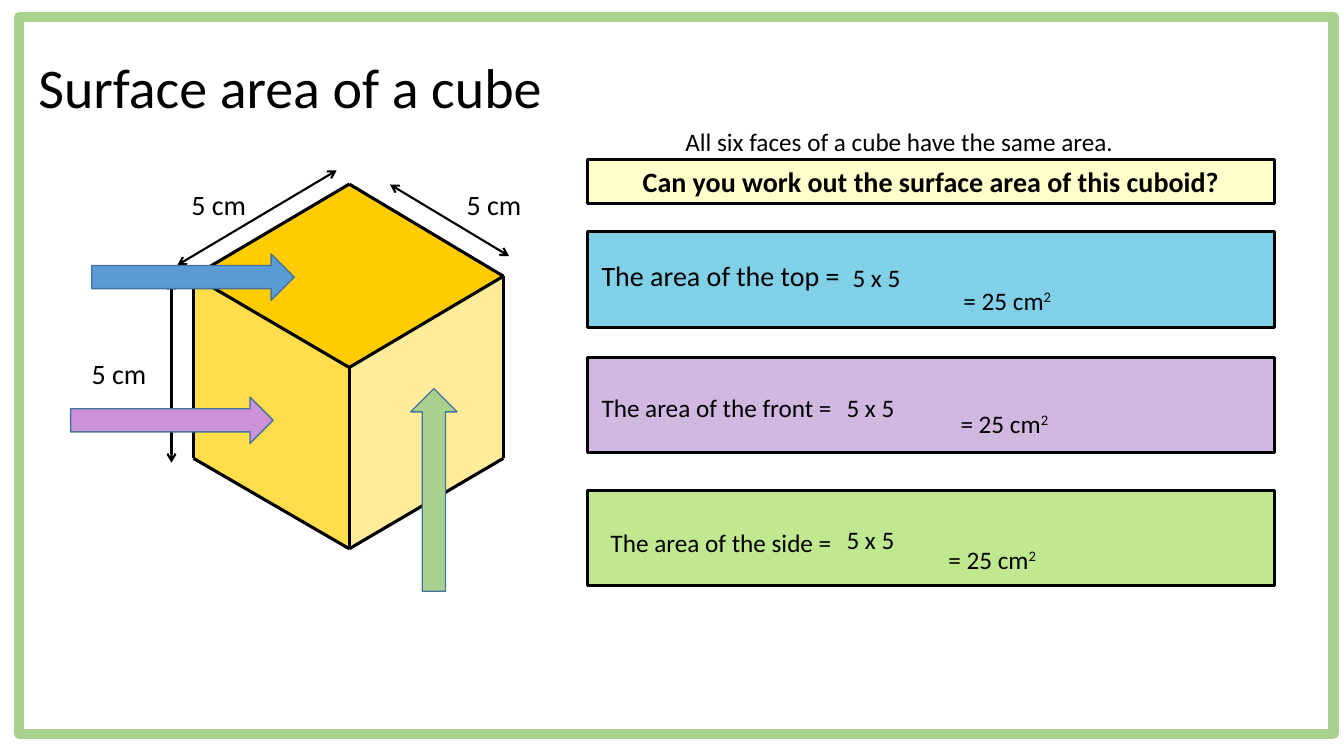
from lxml.etree import SubElement
from pptx import Presentation
from pptx.dml.color import RGBColor
from pptx.enum.shapes import MSO_CONNECTOR, MSO_SHAPE
from pptx.enum.text import MSO_ANCHOR, MSO_AUTO_SIZE, PP_ALIGN
from pptx.oxml.ns import qn
from pptx.util import Pt

COLORS = {
    "black": "000000", "white": "FFFFFF", "frame": "A9D18E",
    "top": "FFCC00", "front": "FFDD4B", "side": "FFEC9B",
    "question": "FFFFCC", "top_box": "80D0E8", "front_box": "D0B8E0",
    "side_box": "C0E890", "blue": "5B9BD5", "purple": "CB92DA",
    "green": "A9D18E", "outline": "43739E",
}


def rgb(name):
    return RGBColor.from_string(COLORS[name])


class SlideBuilder:
    font = "Calibri"

    def __init__(self, slide):
        self.s = slide

    def paint(self, sp, fill, line=None, width=2.25):
        sp.shadow.inherit = False
        sp.fill.solid()
        sp.fill.fore_color.rgb = rgb(fill)
        if line:
            sp.line.color.rgb = rgb(line)
            sp.line.width = Pt(width)
        else:
            sp.line.fill.background()
        return sp

    def shape(self, kind, box, fill, line="black", width=2.25):
        sp = self.s.shapes.add_shape(kind, *map(Pt, box))
        return self.paint(sp, fill, line, width)

    def polygon(self, points, fill):
        pts = [(Pt(x), Pt(y)) for x, y in points]
        builder = self.s.shapes.build_freeform(*pts[0], scale=1.0)
        builder.add_line_segments(pts[1:], close=True)
        return self.paint(builder.convert_to_shape(), fill)

    def line(self, start, end, width=2.25, arrows=False):
        sp = self.s.shapes.add_connector(
            MSO_CONNECTOR.STRAIGHT, *map(Pt, (*start, *end)))
        sp.line.color.rgb = rgb("black")
        sp.line.width = Pt(width)
        if arrows:
            ln = sp.element.spPr.find(qn("a:ln"))
            for tag in ("a:headEnd", "a:tailEnd"):
                SubElement(ln, qn(tag), type="arrow")
        SubElement(sp.element.spPr, qn("a:effectLst"))

    def add_words(self, sp, text, size, sup="", bold=False,
                  align=PP_ALIGN.LEFT):
        p = sp.text_frame.paragraphs[0]
        p.alignment = align
        fmt = {"name": self.font, "size": Pt(size), "bold": bold}
        for part in filter(None, (text, sup)):
            r = p.add_run()
            r.text = part
            for key, value in fmt.items():
                setattr(r.font, key, value)
            r.font.color.rgb = rgb("black")
        if sup:
            r._r.get_or_add_rPr().set("baseline", "30000")
        return p

    def text(self, box, text, size=18, sup="", wrap=False):
        sp = self.s.shapes.add_textbox(*map(Pt, box))
        sp.text_frame.word_wrap = wrap
        self.add_words(sp, text, size, sup)

    def title(self, box, text, size):
        sp = self.s.shapes.title
        for key, value in zip(("left", "top", "width", "height"), box):
            setattr(sp, key, Pt(value))
        tf = sp.text_frame
        fmt = {"auto_size": MSO_AUTO_SIZE.NONE, "word_wrap": True,
               "vertical_anchor": MSO_ANCHOR.MIDDLE}
        for key, value in fmt.items():
            setattr(tf, key, value)
        self.add_words(sp, text, size).line_spacing = 0.9
        return sp


def main():
    prs = Presentation()
    prs.slide_width, prs.slide_height = Pt(960), Pt(540)
    b = SlideBuilder(prs.slides.add_slide(prs.slide_layouts[5]))

    # Frame, placed behind the title
    frame = b.shape(MSO_SHAPE.RECTANGLE, (13.7, 12.2, 938.9, 511.9),
                    "white", "frame", 7.25)
    title = b.title((20.2, 12.2, 828, 104.4), "Surface area of a cube", 40)
    title.element.addprevious(frame.element)

    # Cube faces and edges
    left, mid, right = 138.2, 249.5, 359.6
    corners = {
        "back": (mid, 131.5), "left": (left, 197.3), "right": (right, 197.3),
        "centre": (mid, 262.5), "low_left": (left, 327.4),
        "low_right": (right, 327.4), "bottom": (mid, 392),
    }
    faces = {
        "top": ("back", "left", "centre", "right"),
        "front": ("left", "low_left", "bottom", "centre"),
        "side": ("right", "low_right", "bottom", "centre"),
    }
    for fill, names in faces.items():
        b.polygon([corners[n] for n in names], fill)
    edges = {frozenset(pair): pair for names in faces.values()
             for pair in zip(names, names[1:] + names[:1])}
    for start, end in edges.values():
        b.line(corners[start], corners[end])

    # Dimension arrows and labels
    b.text((482.4, 86.4, 375.8, 29), "All six faces of a cube have the same area.",
           wrap=True)
    dimensions = [
        ((122.5, 200.2), (122.5, 330.5), (58.3, 251.3)),
        ((126.7, 189.4), (240.5, 121.7), (129.6, 130.3)),
        ((278.6, 131.8), (363.6, 182.9), (326.2, 130.3)),
    ]
    for start, end, label in dimensions:
        b.line(start, end, 1.5, arrows=True)
        b.text((*label, 54, 31.5), "5 cm", 20)

    # Question
    box_left, box_width = 419.8, 490.3
    question = b.shape(MSO_SHAPE.RECTANGLE, (box_left, 113.8, box_width, 31.7),
                       "question")
    question.text_frame.word_wrap = True
    b.add_words(question, "Can you work out the surface area of this cuboid?",
                20, bold=True, align=PP_ALIGN.CENTER)

    # Answer boxes: face, top, label place and size, product and result places
    answers = [
        ("top", 165.6, (422.6, 181.4), 20, (601.9, 183.6), (681.1, 200.2)),
        ("front", 255.1, (422.6, 276.5), 18, (597.6, 276.5), (679, 288)),
        ("side", 350.1, (429.1, 373), 18, (597.6, 370.8), (670.3, 385.2)),
    ]
    for face, top, label, size, product, result in answers:
        b.shape(MSO_SHAPE.RECTANGLE, (box_left, top, box_width, 68.4),
                f"{face}_box")
        b.text((*label, 185.8, 29), f"The area of the {face} =", size, wrap=True)
        b.text((*product, 53.3, 29), "5 x 5")
        b.text((*result, 78.5, 29), "= 25 cm", sup="2")

    # Block arrows pointing at the faces
    pointers = [("blue", 65.5, 181.4, 0), ("purple", 50.4, 283.7, 0),
                ("green", 237.6, 333.4, 270)]
    for fill, x, y, turn in pointers:
        sp = b.shape(MSO_SHAPE.RIGHT_ARROW, (x, y, 144.7, 33.1),
                     fill, "outline", 1)
        sp.rotation = turn

    prs.save("out.pptx")


if __name__ == "__main__":
    main()
